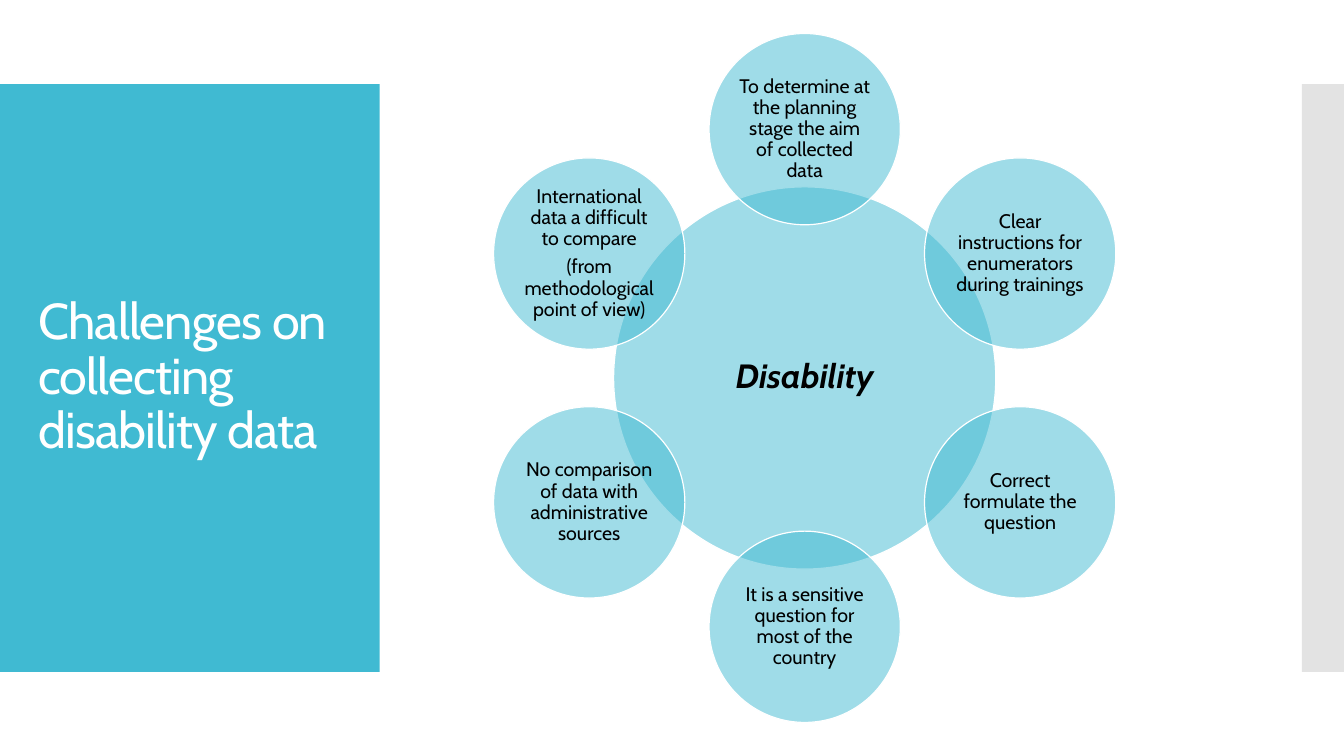
"""Build a slide of six challenges arranged around a central disability circle."""
import math

from lxml import etree
from pptx import Presentation
from pptx.dml.color import RGBColor
from pptx.enum import shapes, text
from pptx.oxml import ns
from pptx.util import Cm, Pt

TITLE = "Challenges on collecting disability data"
HUB = ["Disability"]
CHALLENGES = [
    ["To determine at the planning stage the aim of collected data"],
    ["Clear instructions for enumerators during trainings"],
    ["Correct formulate the question"],
    ["It is a sensitive question for most of the country"],
    ["No comparison of data with administrative sources"],
    ["International data a difficult to compare",
     "(from methodological point of view)"],
]

THEME = {
    "font": "Cabin",
    "accent": "40BAD2", "edge": "C8C8C8", "light": "FFFFFF", "ink": "000000",
    "title": 36, "hub": 24, "challenge": 14,
    "outline": 0.85, "alpha": 50, "leading": 0.9, "gap": 0.35,
}

SLIDE_W, SLIDE_H = 33.87, 19.05
BAND_TOP, BAND_H = 2.12, 14.81
PANEL_W, EDGE_W = 9.57, 1.06
TITLE_BOX = (0.71, 3.12, 8.18, 12.8)
CENTER_X, CENTER_Y = 20.28, SLIDE_H / 2
HUB_D, PETAL_D, ORBIT = 9.63, 4.82, 6.27


def paint(shape, color, alpha=100):
    shape.shadow.inherit = False
    shape.fill.solid()
    shape.fill.fore_color.rgb = RGBColor.from_string(color)
    shape.line.fill.background()
    if alpha < 100:
        tint = shape.fill._xPr.find(".//" + ns.qn("a:srgbClr"))
        etree.SubElement(tint, ns.qn("a:alpha"), val=str(alpha * 1000))


def write(shape, lines, size, color, align, gap=0, bold=False, spacing=0):
    frame = shape.text_frame
    frame.word_wrap = True
    frame.vertical_anchor = text.MSO_ANCHOR.MIDDLE
    frame.text = "\n".join(lines)
    for paragraph in frame.paragraphs:
        paragraph.alignment = align
        paragraph.line_spacing = THEME["leading"]
        paragraph.space_after = Pt(size * gap)
        for run in paragraph.runs:
            run.font.name = THEME["font"]
            run.font.size = Pt(size)
            run.font.color.rgb = RGBColor.from_string(color)
            run.font.bold = run.font.italic = bold
            if spacing:
                run._r.get_or_add_rPr().set("spc", str(spacing))


def add_band(slide, left, width, color, alpha=100):
    band = slide.shapes.add_shape(
        shapes.MSO_SHAPE.RECTANGLE,
        Cm(left), Cm(BAND_TOP), Cm(width), Cm(BAND_H))
    paint(band, color, alpha)


def add_circle(slide, x, y, diameter, lines, size, inset, bold=False):
    circle = slide.shapes.add_shape(
        shapes.MSO_SHAPE.OVAL, Cm(x - diameter / 2), Cm(y - diameter / 2),
        Cm(diameter), Cm(diameter))
    paint(circle, THEME["accent"], THEME["alpha"])
    circle.line.color.rgb = RGBColor.from_string(THEME["light"])
    circle.line.width = Pt(THEME["outline"])
    frame = circle.text_frame
    frame.margin_left = frame.margin_right = Cm(inset)
    frame.margin_top = frame.margin_bottom = Cm(inset)
    write(circle, lines, size, THEME["ink"], text.PP_ALIGN.CENTER,
          THEME["gap"], bold)


def main():
    deck = Presentation()
    deck.slide_width, deck.slide_height = Cm(SLIDE_W), Cm(SLIDE_H)
    slide = deck.slides.add_slide(deck.slide_layouts[6])

    add_band(slide, 0, PANEL_W, THEME["accent"])
    add_band(slide, SLIDE_W - EDGE_W, EDGE_W, THEME["edge"], THEME["alpha"])
    heading = slide.shapes.add_textbox(*map(Cm, TITLE_BOX))
    write(heading, [TITLE], THEME["title"], THEME["light"],
          text.PP_ALIGN.LEFT, spacing=-60)

    add_circle(slide, CENTER_X, CENTER_Y, HUB_D, HUB, THEME["hub"], 0.08, True)
    for index, challenge in enumerate(CHALLENGES):
        angle = math.tau * index / len(CHALLENGES)
        add_circle(slide, CENTER_X + ORBIT * math.sin(angle),
                   CENTER_Y - ORBIT * math.cos(angle),
                   PETAL_D, challenge, THEME["challenge"], 0.05)
    deck.save("out.pptx")


if __name__ == "__main__":
    main()
